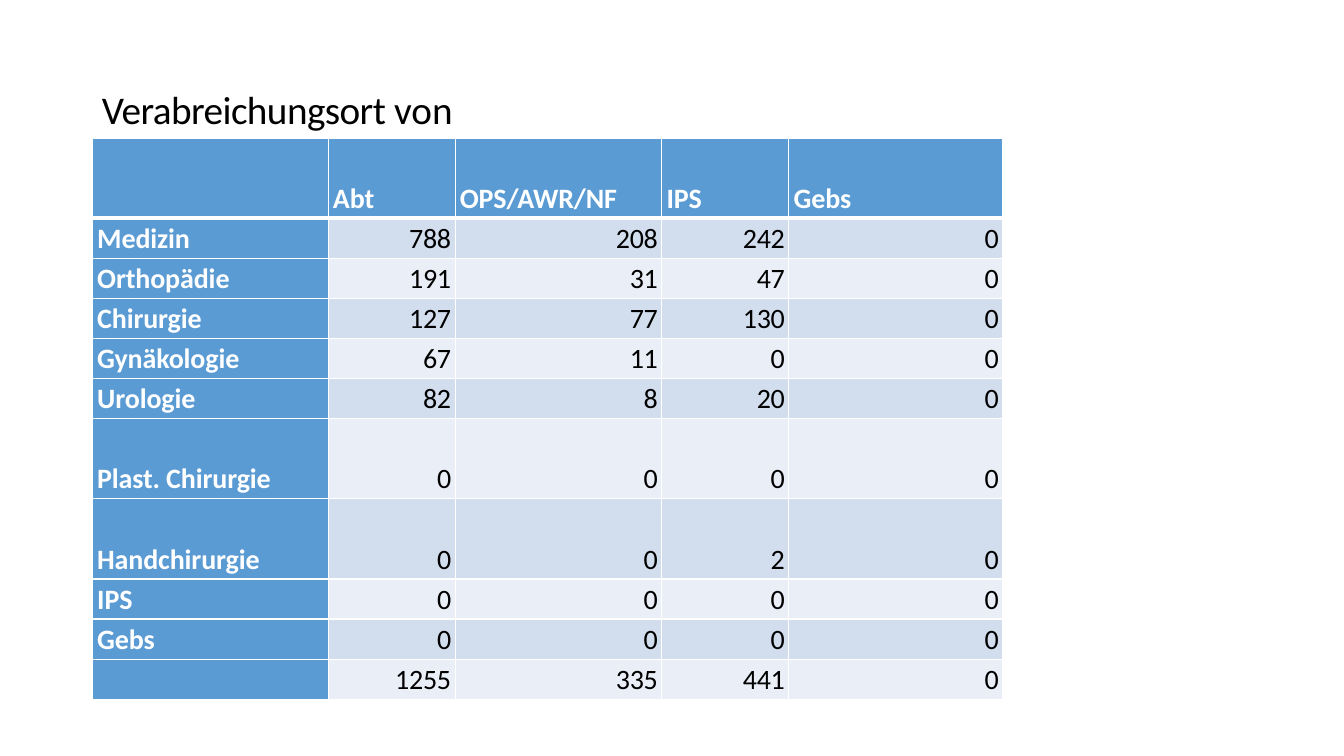
from lxml import etree
from pptx import Presentation
from pptx import util as u
from pptx.dml.color import RGBColor
from pptx.enum import text
from pptx.oxml.ns import qn


def add_run(p, words, size, color, bold=False, spacing=0):
    r = p.add_run()
    r.text = words
    r.font.name = "Calibri"
    r.font.size = u.Pt(size)
    r.font.bold = bold
    r.font.color.rgb = RGBColor.from_string(color)
    r.font._element.set("spc", str(int(spacing * 100)))


def style_cell(cell, color, widths):
    tcPr = cell._tc.get_or_add_tcPr()
    for side, width in widths.items():
        ln = etree.SubElement(tcPr, qn("a:" + side), w=str(u.Pt(width)))
        fill = etree.SubElement(ln, qn("a:solidFill"))
        etree.SubElement(fill, qn("a:srgbClr"), val="FFFFFF")
    cell.fill.solid()
    cell.fill.fore_color.rgb = RGBColor.from_string(color)


prs = Presentation()
prs.slide_width, prs.slide_height = u.Cm(33.87), u.Cm(19.05)
s = prs.slides.add_slide(prs.slide_layouts[6])

sp = s.shapes.add_textbox(u.Cm(2.54), u.Cm(2.11), u.Cm(14.7), u.Cm(1.25))
tf = sp.text_frame
tf.word_wrap = True
tf.margin_left = u.Cm(0.03)
tf.margin_top = u.Cm(0.03)
tf.margin_right = tf.margin_bottom = 0
p = tf.paragraphs[0]
p.space_before = u.Pt(0.9)
add_run(p, "Verabreichungsort ", 28, "000000", spacing=-0.4)
add_run(p, "von", 28, "000000")

rows = [
    ("", "Abt", "OPS/AWR/NF", "IPS", "Gebs"),
    ("Medizin", 788, 208, 242, 0),
    ("Orthopädie", 191, 31, 47, 0),
    ("Chirurgie", 127, 77, 130, 0),
    ("Gynäkologie", 67, 11, 0, 0),
    ("Urologie", 82, 8, 20, 0),
    ("Plast. Chirurgie", 0, 0, 0, 0),
    ("Handchirurgie", 0, 0, 2, 0),
    ("IPS", 0, 0, 0, 0),
    ("Gebs", 0, 0, 0, 0),
    ("", 1255, 335, 441, 0),
]
col_widths = [5.94, 3.2, 5.21, 3.2, 5.39]
tall_rows = (0, 6, 7)
row_heights = [2.02 if i in tall_rows else 1.01 for i in range(len(rows))]

table = s.shapes.add_table(
    len(rows), len(col_widths), u.Cm(2.33), u.Cm(3.48),
    u.Cm(sum(col_widths)), u.Cm(sum(row_heights))).table
for column, width in zip(table.columns, col_widths):
    column.width = u.Cm(width)
for row, height in zip(table.rows, row_heights):
    row.height = u.Cm(height)

for i, values in enumerate(rows):
    for j, value in enumerate(values):
        cell = table.cell(i, j)
        heading = i == 0 or j == 0
        band = "D2DEEE" if i % 2 else "EAEEF7"
        style_cell(cell, "5B9BD4" if heading else band,
                   {"lnL": 1, "lnR": 1, "lnT": 3 if i == 1 else 1, "lnB": 3 if i == 0 else 1})
        cell.margin_left = u.Cm(0.12)
        cell.margin_right = u.Cm(0.1)
        cell.margin_top = 0
        cell.margin_bottom = u.Cm(0.06)
        cell.vertical_anchor = text.MSO_ANCHOR.BOTTOM
        p = cell.text_frame.paragraphs[0]
        p.alignment = text.PP_ALIGN.LEFT if heading else text.PP_ALIGN.RIGHT
        if value != "":
            add_run(p, str(value), 20, "FFFFFF" if heading else "000000",
                    heading, -0.1 if heading else -0.2)

prs.save("out.pptx")
